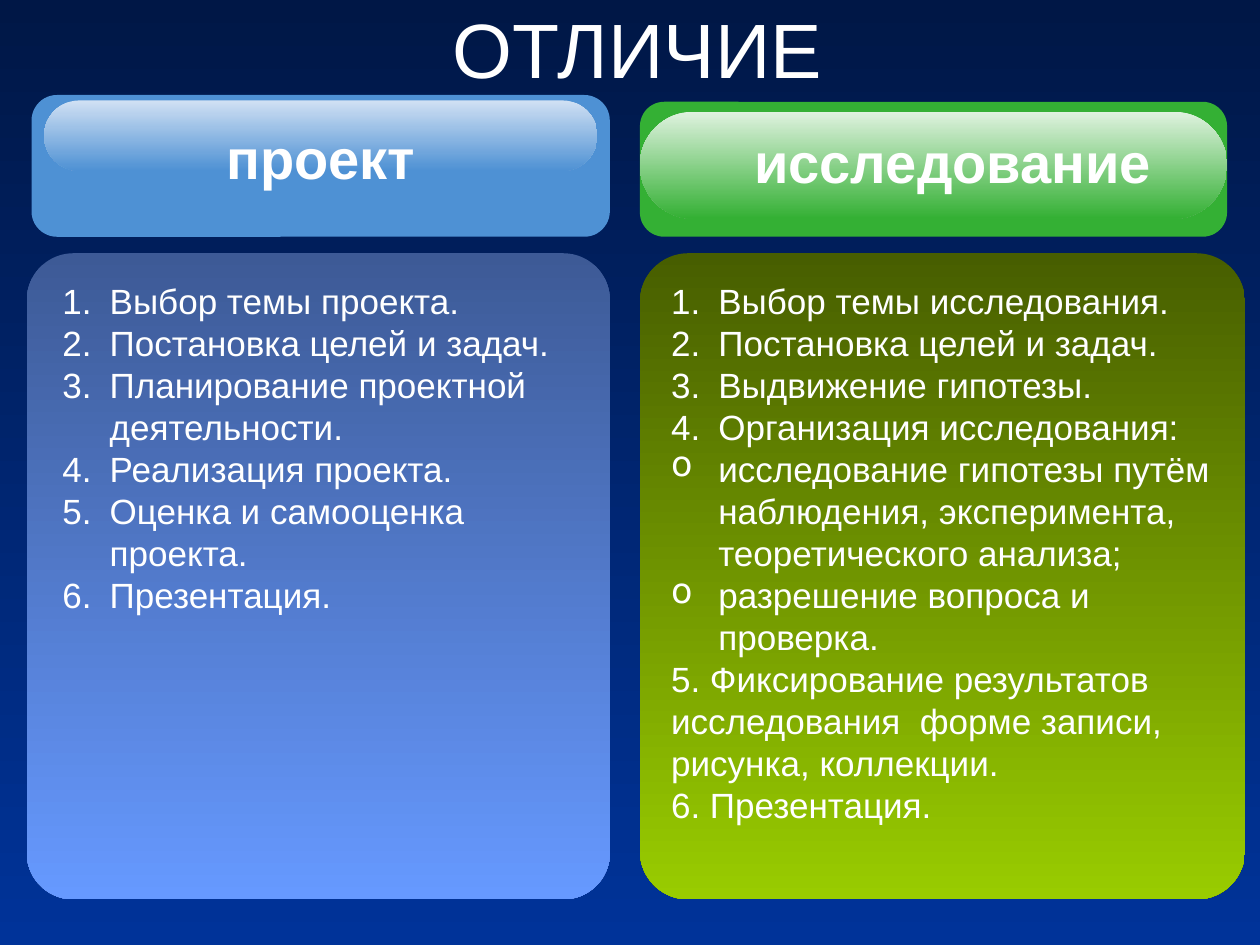
import pptx
import pptx.util
import pptx.dml.color
import pptx.enum.shapes
import pptx.enum.text
import pptx.oxml.ns
from lxml import etree

Pt = pptx.util.Pt
ALIGN = pptx.enum.text.PP_ALIGN
ANCHOR = pptx.enum.text.MSO_ANCHOR


def color(code):
    return pptx.dml.color.RGBColor.from_string(code)


class Deck:
    """Holds the style and the current slide, and draws each kind of element."""

    font = "Arial"
    ink = "FFFFFF"
    hang = 27

    def __init__(self, wide, high):
        self.file = pptx.Presentation()
        self.file.slide_width, self.file.slide_height = Pt(wide), Pt(high)
        self.slide = self.file.slides.add_slide(self.file.slide_layouts[6])

    def fade(self, fill, top, base):
        fill.gradient()
        fill.gradient_angle = 270
        for stop, code, place in zip(fill.gradient_stops, (top, base), (0, 1)):
            stop.color.rgb = color(code)
            stop.position = place

    def back(self, top, base):
        self.fade(self.slide.background.fill, top, base)

    def block(self, box, round_by, base, top=None):
        kind = pptx.enum.shapes.MSO_SHAPE.ROUNDED_RECTANGLE
        shape = self.slide.shapes.add_shape(kind, *map(Pt, box))
        shape.adjustments[0] = round_by
        shape.shadow.inherit = False
        shape.line.fill.background()
        if top:
            self.fade(shape.fill, top, base)
        else:
            shape.fill.solid()
            shape.fill.fore_color.rgb = color(base)

    def mark(self, para, sign):
        props = para._p.get_or_add_pPr()
        props.set("marL", str(Pt(self.hang)))
        props.set("indent", str(-Pt(self.hang)))
        tag, key, value = ("buAutoNum", "type", "arabicPeriod") if sign == "1." else ("buChar", "char", sign)
        etree.SubElement(props, pptx.oxml.ns.qn("a:" + tag)).set(key, value)

    def text(self, box, items, size, bold=False, align=ALIGN.LEFT, anchor=ANCHOR.TOP):
        frame = self.slide.shapes.add_textbox(*map(Pt, box)).text_frame
        frame.word_wrap = True
        frame.vertical_anchor = anchor
        for i, (sign, words) in enumerate(items):
            para = frame.add_paragraph() if i else frame.paragraphs[0]
            para.text = words
            para.alignment = align
            if sign:
                self.mark(para, sign)
            para.font.name = self.font
            para.font.size = Pt(size)
            para.font.bold = bold
            para.font.color.rgb = color(self.ink)

    def label(self, box, words, size, bold=False, anchor=ANCHOR.TOP):
        self.text(box, [("", words)], size, bold, ALIGN.CENTER, anchor)

    def column(self, panel, head, gloss, name, body, tones, title, items):
        dark, light, main, shine = tones
        self.block(panel, 0.08, light, dark)
        self.block(head, 0.18, main)
        self.block(gloss, 0.5, main, shine)
        self.label(name, title, 32, True)
        self.text(body, items, 20)


def main():
    deck = Deck(720, 540)
    deck.back("001746", "003399")
    deck.label((4.3, -2.9, 720, 59.8), "ОТЛИЧИЕ", 44, anchor=ANCHOR.MIDDLE)
    deck.column(
        panel=(15.3, 144.7, 333.2, 369.2),
        head=(18, 54.3, 330.5, 81),
        gloss=(25.2, 57.4, 316.2, 40.3),
        name=(25.2, 67, 316.2, 46),
        body=(28.6, 156.2, 306.7, 201),
        tones=("3D5A96", "6699FF", "4E91D4", "D0E0F3"),
        title="проект",
        items=[("1.", words) for words in (
            "Выбор темы проекта.",
            "Постановка целей и задач.",
            "Планирование проектной деятельности.",
            "Реализация проекта.",
            "Оценка и самооценка проекта.",
            "Презентация.",
        )],
    )
    deck.column(
        panel=(365.7, 144.7, 345.7, 369.2),
        head=(365.7, 58.2, 335.5, 77.1),
        gloss=(365.7, 63.8, 335.5, 61.2),
        name=(377.1, 69.2, 334.8, 75),
        body=(376.4, 156.2, 324, 322.6),
        tones=("475E00", "99CC00", "34B034", "DFF2DF"),
        title="исследование",
        items=[
            ("1.", "Выбор темы исследования."),
            ("1.", "Постановка целей и задач."),
            ("1.", "Выдвижение гипотезы."),
            ("1.", "Организация исследования:"),
            ("o", "исследование гипотезы путём наблюдения, эксперимента, теоретического анализа;"),
            ("o", "разрешение вопроса и проверка."),
            ("", "5. Фиксирование результатов исследования  форме записи, рисунка, коллекции."),
            ("", "6. Презентация."),
        ],
    )
    deck.file.save("out.pptx")


if __name__ == "__main__":
    main()
